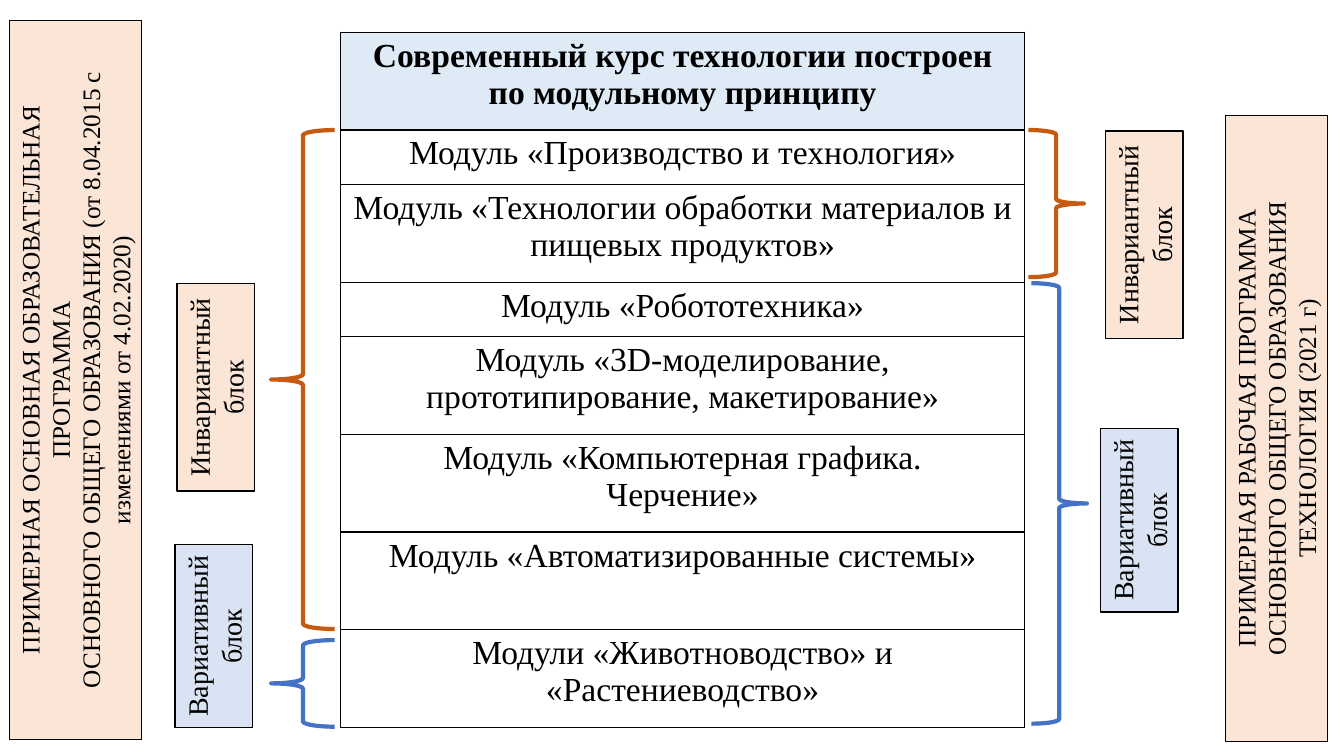
from itertools import accumulate

from lxml import etree
from pptx import Presentation, util as u
from pptx.dml.color import RGBColor
from pptx.enum import shapes, text
from pptx.oxml.ns import qn

FONT = "Times New Roman"
COLORS = {
    "black": "000000",
    "white": "FFFFFF",
    "header": "DEEBF7",
    "peach": "FBE5D6",
    "pale_blue": "DAE3F3",
    "orange": "C55A11",
    "blue": "4472C4",
}

TABLE_LEFT, TABLE_TOP, TABLE_WIDTH = 3.38, 0.32, 6.78
TALL, SHORT = 0.97, 0.54
ROWS = [
    (TALL, ["Современный курс технологии построен по модульному принципу"]),
    (SHORT, ["Модуль «Производство и технология»"]),
    (TALL, ["Модуль «Технологии обработки материалов и пищевых продуктов»"]),
    (SHORT, ["Модуль «Робототехника»"]),
    (TALL, ["Модуль «3D-моделирование, прототипирование, макетирование»"]),
    (TALL, ["Модуль «Компьютерная графика.", "Черчение»"]),
    (TALL, ["Модуль «Автоматизированные системы»"]),
    (TALL, ["Модули «Животноводство» и «Растениеводство»"]),
]
ROW_EDGES = list(accumulate((height for height, _ in ROWS), initial=TABLE_TOP))

INVARIANT = ["Инвариантный", "блок"]
VARIABLE = ["Вариативный", "блок"]


def rgb(name):
    return RGBColor.from_string(COLORS[name])


def write(tf, lines, size, bold=False):
    for i, line in enumerate(lines):
        p = tf.paragraphs[0] if i == 0 else tf.add_paragraph()
        p.alignment = text.PP_ALIGN.CENTER
        r = p.add_run()
        r.text = line
        r.font.name = FONT
        r.font.size = u.Pt(size)
        r.font.bold = bold
        r.font.color.rgb = rgb("black")


def add_borders(cell):
    """Draw a thin black line on all four sides, placed before the cell fill."""
    props = cell._tc.get_or_add_tcPr()
    for i, side in enumerate(("a:lnL", "a:lnR", "a:lnT", "a:lnB")):
        line = etree.Element(qn(side), w=str(u.Pt(1)))
        fill = etree.SubElement(line, qn("a:solidFill"))
        etree.SubElement(fill, qn("a:srgbClr"), val=COLORS["black"])
        props.insert(i, line)


def add_module_table(s):
    frame = s.shapes.add_table(
        len(ROWS), 1, u.Inches(TABLE_LEFT), u.Inches(TABLE_TOP),
        u.Inches(TABLE_WIDTH), u.Inches(ROW_EDGES[-1] - TABLE_TOP))
    table = frame.table
    for i, (height, lines) in enumerate(ROWS):
        table.rows[i].height = u.Inches(height)
        cell = table.cell(i, 0)
        cell.fill.solid()
        cell.fill.fore_color.rgb = rgb("white" if i else "header")
        add_borders(cell)
        write(cell.text_frame, lines, 24, bold=i == 0)


def add_vertical_box(s, center, length, depth, lines, fill, size, border, wrap):
    """Add a box whose text reads upwards; length runs along the text."""
    x, y = center
    sp = s.shapes.add_shape(
        shapes.MSO_SHAPE.RECTANGLE, u.Inches(x - length / 2),
        u.Inches(y - depth / 2), u.Inches(length), u.Inches(depth))
    sp.rotation = 270
    sp.shadow.inherit = False
    sp.fill.solid()
    sp.fill.fore_color.rgb = rgb(fill)
    sp.line.color.rgb = rgb("black")
    sp.line.width = u.Pt(border)
    tf = sp.text_frame
    tf.word_wrap = wrap
    tf.auto_size = text.MSO_AUTO_SIZE.SHAPE_TO_FIT_TEXT
    tf.vertical_anchor = text.MSO_ANCHOR.TOP
    write(tf, lines, size)


def add_program(s, center, length, depth, lines):
    add_vertical_box(s, center, length, depth, lines, "peach", 18, 0.75, True)


def add_block(s, center, length, lines, fill):
    add_vertical_box(s, center, length, 0.77, lines, fill, 20, 1, False)


def add_brace(s, kind, left, width, rows, color, gaps):
    """Span table rows from the first up to the end edge, less the two gaps."""
    top = ROW_EDGES[rows[0]] + gaps[0]
    bottom = ROW_EDGES[rows[1]] - gaps[1]
    sp = s.shapes.add_shape(
        kind, u.Inches(left), u.Inches(top), u.Inches(width),
        u.Inches(bottom - top))
    sp.shadow.inherit = False
    sp.fill.background()
    sp.line.color.rgb = rgb(color)
    sp.line.width = u.Pt(3)


def main():
    prs = Presentation()
    prs.slide_width, prs.slide_height = u.Inches(13.33), u.Inches(7.5)
    s = prs.slides.add_slide(prs.slide_layouts[6])

    add_module_table(s)

    add_program(s, (0.75, 3.77), 7.13, 1.31, [
        "ПРИМЕРНАЯ ОСНОВНАЯ ОБРАЗОВАТЕЛЬНАЯ ПРОГРАММА",
        "ОСНОВНОГО ОБЩЕГО ОБРАЗОВАНИЯ (от 8.04.2015 с изменениями от 4.02.2020)",
    ])
    add_program(s, (12.66, 4.25), 6.21, 1.01, [
        "ПРИМЕРНАЯ РАБОЧАЯ ПРОГРАММА",
        "ОСНОВНОГО ОБЩЕГО ОБРАЗОВАНИЯ",
        "ТЕХНОЛОГИЯ (2021 г)",
    ])

    left, right = shapes.MSO_SHAPE.LEFT_BRACE, shapes.MSO_SHAPE.RIGHT_BRACE
    add_brace(s, left, 2.69, 0.63, (1, 7), "orange", (0, 0.01))
    add_brace(s, left, 2.69, 0.63, (7, 8), "blue", (0.1, 0.01))
    add_brace(s, right, 10.2, 0.55, (1, 3), "orange", (0, 0.05))
    add_brace(s, right, 10.23, 0.55, (3, 8), "blue", (0.01, 0.04))

    add_block(s, (2.14, 3.84), 2.06, INVARIANT, "peach")
    add_block(s, (2.12, 6.31), 1.82, VARIABLE, "pale_blue")
    add_block(s, (11.35, 2.33), 2.06, INVARIANT, "peach")
    add_block(s, (11.3, 5.16), 1.82, VARIABLE, "pale_blue")

    prs.save("out.pptx")


if __name__ == "__main__":
    main()
